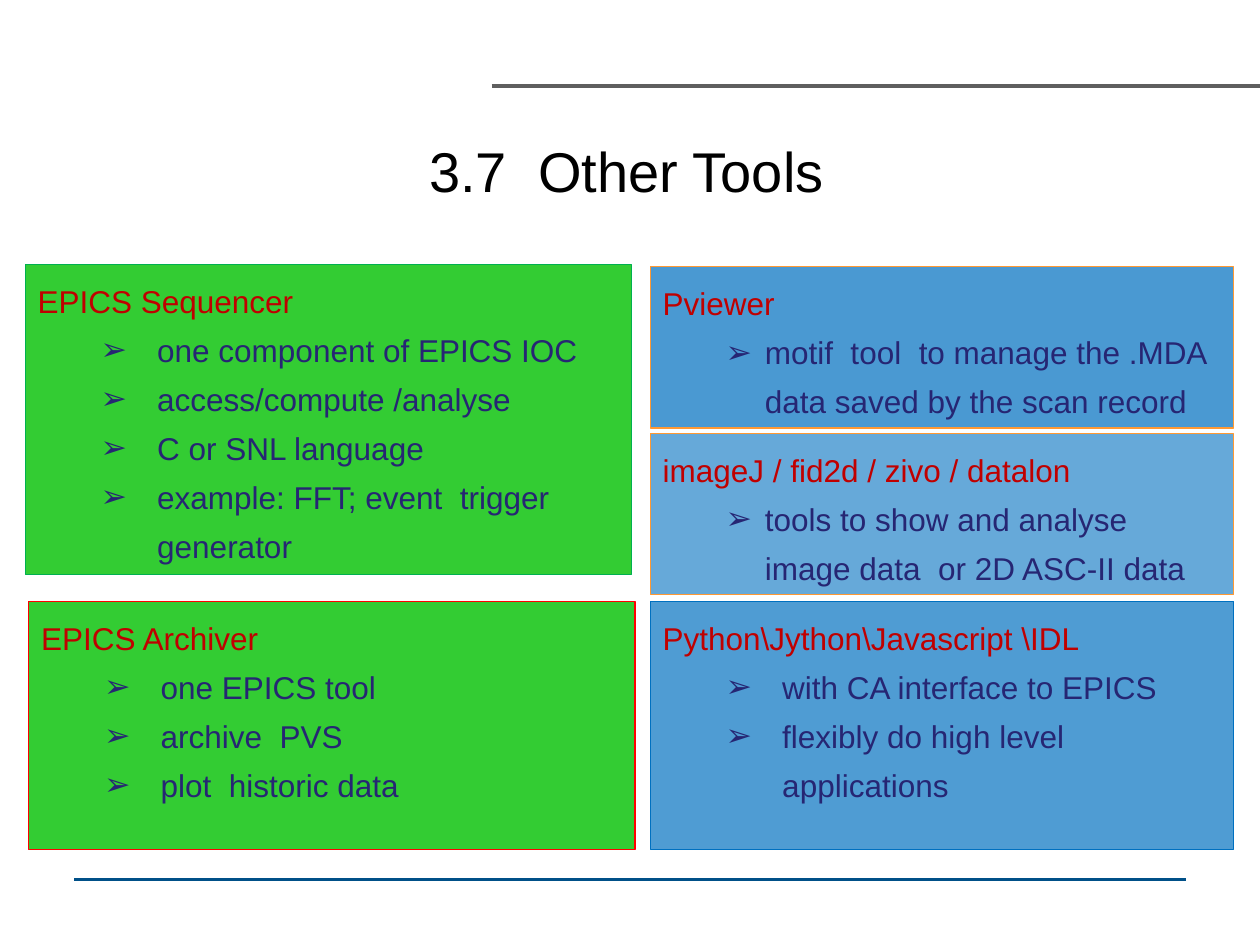
from dataclasses import dataclass

from lxml.etree import SubElement
from pptx import Presentation
from pptx.dml.color import RGBColor
from pptx.enum.shapes import MSO_CONNECTOR, MSO_SHAPE
from pptx.enum.text import MSO_ANCHOR, PP_ALIGN
from pptx.oxml.ns import qn
from pptx.util import Cm, Pt

FONT = "Arial"
GREEN, BLUE, ORANGE = "33CC33", "0070C0", "FF9933"
HEADING, BODY = "C00000", "262673"
LEFT_WIDTH, RIGHT_X, RIGHT_WIDTH = 12.22, 13.11, 11.76
LOWER_Y, LOWER_HEIGHT, SMALL_HEIGHT = 12.12, 5.0, 3.25
BULLET_START = 1.27


@dataclass
class Panel:
    """One coloured tool panel, with lengths in centimetres."""
    left: float
    top: float
    width: float
    height: float
    fill: str
    line: str
    heading: str
    bullets: list[str]
    text_start: float = 2.41
    opacity: int = 100


@dataclass
class Rule:
    """One horizontal rule, with lengths in centimetres."""
    left: float
    right: float
    top: float
    color: str


RULES = [Rule(9.91, 25.4, 1.73, "5F5F5F"), Rule(1.5, 23.9, 17.73, "005088")]

PANELS = [
    Panel(0.51, 5.33, LEFT_WIDTH, 6.25, GREEN, "00B050", "EPICS Sequencer",
          ["one component of EPICS IOC", "access/compute /analyse",
           "C or SNL language", "example: FFT; event  trigger generator"]),
    Panel(0.58, LOWER_Y, LEFT_WIDTH, LOWER_HEIGHT, GREEN, "FF0000", "EPICS Archiver",
          ["one EPICS tool", "archive  PVS", "plot  historic data"]),
    Panel(RIGHT_X, LOWER_Y, RIGHT_WIDTH, LOWER_HEIGHT, BLUE, BLUE,
          "Python\\Jython\\Javascript \\IDL",
          ["with CA interface to EPICS", "flexibly do high level applications"],
          opacity=69),
    Panel(RIGHT_X, 5.38, RIGHT_WIDTH, SMALL_HEIGHT, BLUE, ORANGE, "Pviewer",
          ["motif  tool  to manage the .MDA data saved by the scan record"],
          text_start=2.06, opacity=71),
    Panel(RIGHT_X, 8.74, RIGHT_WIDTH, SMALL_HEIGHT, BLUE, ORANGE,
          "imageJ / fid2d / zivo / datalon",
          ["tools to show and analyse image data  or 2D ASC-II data"],
          text_start=2.06, opacity=60),
]


def rgb(color: str) -> RGBColor:
    """Turn a hex string into a colour."""
    return RGBColor.from_string(color)


def write(para, text: str, *, size: float = 18, color: str = BODY,
          align=PP_ALIGN.LEFT, spacing: float | None = None,
          bullet_at: float | None = None) -> None:
    """Fill a paragraph with formatted text, bulleted when bullet_at is given."""
    para.alignment = align
    if spacing:
        para.line_spacing = Pt(spacing)
    if bullet_at is not None:
        para.level = 1
        properties = para._p.get_or_add_pPr()
        properties.set("marL", str(Cm(bullet_at)))
        properties.set("indent", str(Cm(BULLET_START) - Cm(bullet_at)))
        SubElement(properties, qn("a:buFont")).set("typeface", FONT)
        SubElement(properties, qn("a:buChar")).set("char", "➢")
    span = para.add_run()
    span.text = text
    span.font.name = FONT
    span.font.size = Pt(size)
    span.font.color.rgb = rgb(color)


def draw_rule(page, rule: Rule) -> None:
    """Draw a horizontal rule."""
    line = page.shapes.add_connector(MSO_CONNECTOR.STRAIGHT, Cm(rule.left), Cm(rule.top),
                                     Cm(rule.right), Cm(rule.top))
    line.line.color.rgb = rgb(rule.color)
    line.line.width = Pt(2.25)
    SubElement(line._element.spPr, qn("a:effectLst"))


def draw_title(page, text: str) -> None:
    """Draw the centred slide title."""
    frame = page.shapes.add_textbox(Cm(1.7), Cm(2.13), Cm(21.87), Cm(2.59)).text_frame
    frame.word_wrap = True
    frame.vertical_anchor = MSO_ANCHOR.MIDDLE
    write(frame.paragraphs[0], text, size=32, color="000000", align=PP_ALIGN.CENTER)


def draw_panel(page, panel: Panel) -> None:
    """Draw a panel with its heading and bullets."""
    box = page.shapes.add_shape(MSO_SHAPE.RECTANGLE, Cm(panel.left), Cm(panel.top),
                                Cm(panel.width), Cm(panel.height))
    box.shadow.inherit = False
    box.fill.solid()
    box.fill.fore_color.rgb = rgb(panel.fill)
    if panel.opacity < 100:
        color = box._element.spPr.find(qn("a:solidFill")).find(qn("a:srgbClr"))
        SubElement(color, qn("a:alpha")).set("val", str(panel.opacity * 1000))
    box.line.color.rgb = rgb(panel.line)
    box.line.width = Pt(0.75)
    frame = box.text_frame
    frame.word_wrap = True
    frame.vertical_anchor = MSO_ANCHOR.TOP
    write(frame.paragraphs[0], panel.heading, color=HEADING, spacing=28)
    for bullet in panel.bullets:
        write(frame.add_paragraph(), bullet, spacing=28, bullet_at=panel.text_start)


def main() -> None:
    """Build and save the deck."""
    deck = Presentation()
    deck.slide_width, deck.slide_height = Cm(25.4), Cm(19.05)
    page = deck.slides.add_slide(deck.slide_layouts[6])
    for rule in RULES:
        draw_rule(page, rule)
    draw_title(page, "3.7  Other Tools")
    for panel in PANELS:
        draw_panel(page, panel)
    deck.save("out.pptx")


if __name__ == "__main__":
    main()
